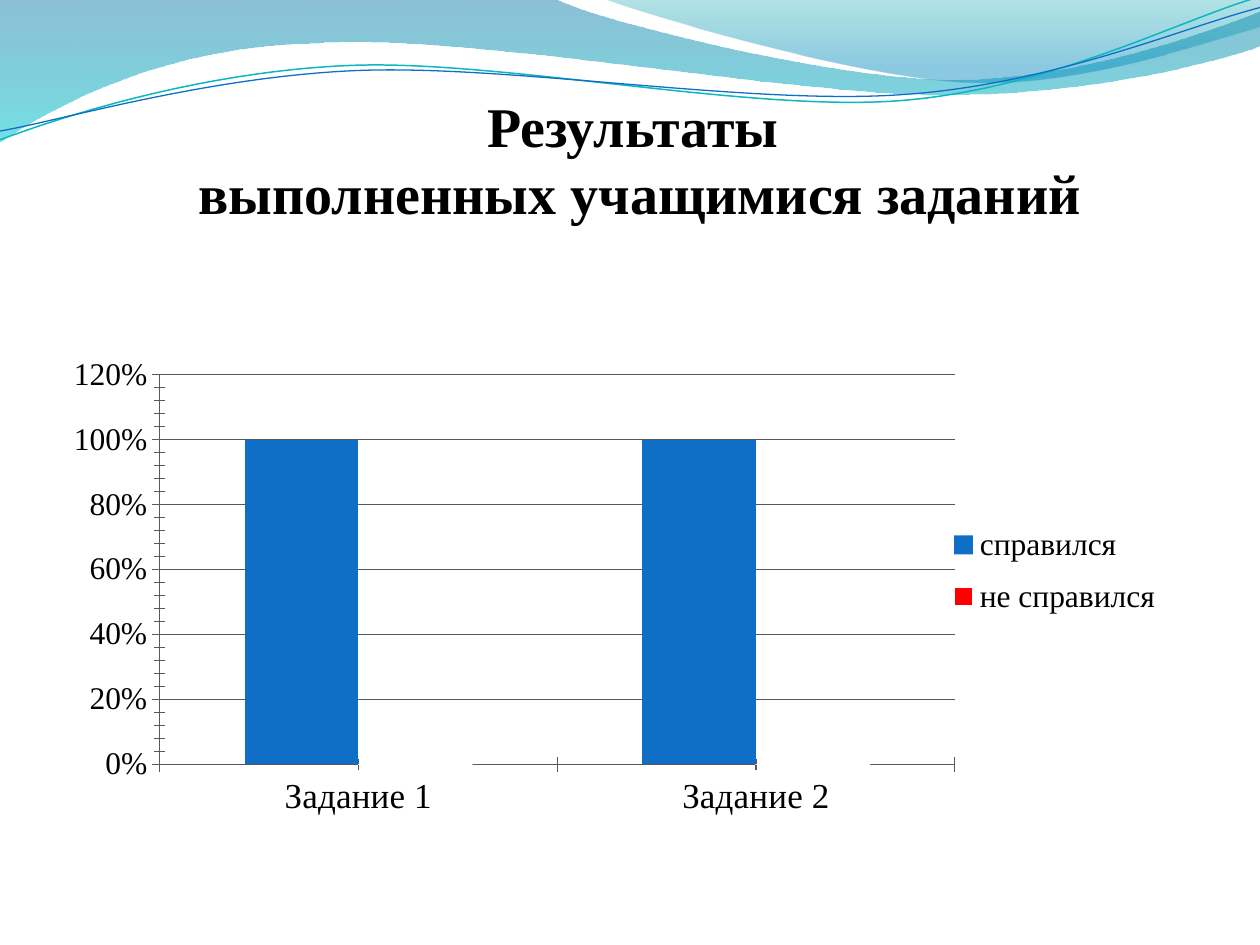
import math
from dataclasses import dataclass

from lxml import etree
from pptx import Presentation
from pptx.chart.data import CategoryChartData
from pptx.dml.color import RGBColor
from pptx.enum.chart import XL_CHART_TYPE, XL_LEGEND_POSITION, XL_TICK_MARK
from pptx.enum.text import MSO_ANCHOR, MSO_AUTO_SIZE, PP_ALIGN
from pptx.oxml.ns import qn
from pptx.util import Inches, Pt

COLUMNS = XL_CHART_TYPE.COLUMN_CLUSTERED
LEGEND_RIGHT = XL_LEGEND_POSITION.RIGHT
CROSS = XL_TICK_MARK.CROSS
CENTER = PP_ALIGN.CENTER
MIDDLE = MSO_ANCHOR.MIDDLE
GROW = MSO_AUTO_SIZE.SHAPE_TO_FIT_TEXT


@dataclass(frozen=True)
class Theme:
    font: str = "Times New Roman"
    title_size: int = 32
    category_size: int = 20
    label_size: int = 18
    text: str = "000000"
    axis: str = "595959"
    passed: str = "0F6FC6"
    failed: str = "FF0000"
    failed_outline: str = "FFFFFF"
    teal_line: str = "0AB8BF"
    blue_line: str = "0F6FC6"
    # Gradient stops: position, colour, opacity in percent
    left_wave: tuple = ((0, "0074A1", 45), (1, "00C6CF", 55))
    right_wave: tuple = ((0, "00A1A9", 30), (0.8, "008BBF", 45))


THEME = Theme()
CURVE_TILT = -2.7
CURVE_CENTER = (4.99, 0.58)

# Each path is a start point, then line ends (2 numbers) or cubic curves (6 numbers).
LEFT_WAVE = [
    (0, 0), (4.4, -0.01),
    (4.76, 0.17, 6.64, 0.63, 7.58, 0.63), (8.53, 0.63, 9.58, 0.26, 10, 0.09),
    (10.01, 0.36),
    (9.83, 0.44, 8.7, 0.76, 7.46, 0.75), (6.22, 0.75, 3.82, 0.28, 2.57, 0.34),
    (1.29, 0.36, 0.46, 0.83, -0.01, 1.13),
]
RIGHT_WAVE = [
    (4.79, -0.01),
    (5.09, 0.11, 6.82, 0.62, 7.69, 0.65), (8.56, 0.69, 9.61, 0.32, 10, 0.21),
    (10, 0),
]
TEAL_CURVE = [
    (0, 1.11),
    (0.48, 0.93, 1.58, 0.57, 2.77, 0.52), (3.95, 0.47, 5.93, 0.89, 7.13, 0.8),
    (8.33, 0.71, 9.38, 0.15, 9.98, -0.02),
]
BLUE_CURVE = [
    (0, 1.04),
    (0.47, 0.96, 1.64, 0.61, 2.83, 0.56), (4.03, 0.51, 5.97, 0.84, 7.17, 0.75),
    (8.36, 0.67, 9.41, 0.21, 10, 0.06),
]


def rgb(color):
    return RGBColor.from_string(color)


def pairs(numbers):
    return list(zip(numbers[::2], numbers[1::2]))


def untilt(segment):
    """Turn a segment back about the curve centre, so that the shape's rotation restores it."""
    angle = math.radians(-CURVE_TILT)
    cos, sin = math.cos(angle), math.sin(angle)
    center_x, center_y = CURVE_CENTER
    turned = []
    for x, y in pairs(segment):
        dx, dy = x - center_x, y - center_y
        turned += [center_x + dx * cos - dy * sin, center_y + dx * sin + dy * cos]
    return turned


def add_outline(page, segments, close):
    """Build a freeform through the segment ends, then bend its curved segments."""
    ends = [(Inches(x), Inches(y)) for x, y in (segment[-2:] for segment in segments)]
    builder = page.shapes.build_freeform(*ends[0])
    builder.add_line_segments(ends[1:], close=close)
    shape = builder.convert_to_shape()
    shape.shadow.inherit = False
    lines = list(shape.element.iter(qn("a:lnTo")))
    for line, segment in zip(lines, segments[1:]):
        if len(segment) == 6:
            curve = etree.Element(qn("a:cubicBezTo"))
            for x, y in pairs(segment):
                etree.SubElement(curve, qn("a:pt"), x=str(Inches(x) - shape.left),
                                 y=str(Inches(y) - shape.top))
            line.getparent().replace(line, curve)
    return shape


def add_wave(page, segments, stops):
    wave = add_outline(page, segments, close=True)
    wave.line.fill.background()
    wave.fill.gradient()
    wave.fill.gradient_angle = 270
    for stop, (position, color, _) in zip(wave.fill.gradient_stops, stops):
        stop.position = position
        stop.color.rgb = rgb(color)
    for element, (_, _, opacity) in zip(wave.element.iter(qn("a:srgbClr")), stops):
        etree.SubElement(element, qn("a:alpha"), val=str(opacity * 1000))


def add_curve(page, segments, color, width):
    curve = add_outline(page, [untilt(segment) for segment in segments], close=False)
    curve.rotation = CURVE_TILT
    curve.fill.background()
    curve.line.color.rgb = rgb(color)
    curve.line.width = Pt(width)


def set_font(font, size):
    font.name = THEME.font
    font.size = Pt(size)
    font.color.rgb = rgb(THEME.text)


def set_line(line, color):
    line.color.rgb = rgb(color)
    line.width = Pt(0.75)


def add_title(page, lines):
    box = page.shapes.add_textbox(Inches(0.58), Inches(0.67), Inches(9), Inches(1.18))
    frame = box.text_frame
    frame.word_wrap = True
    frame.auto_size = GROW
    frame.vertical_anchor = MIDDLE
    frame.text = "\n".join(lines)
    for para in frame.paragraphs:
        para.alignment = CENTER
        set_font(para.font, THEME.title_size)
        para.font.bold = True


def set_layout(parent, before, x, y, width, height, inner=False):
    """Place a chart part by fractions of the chart, ahead of the child named before."""
    for old in parent.findall(qn("c:layout")):
        parent.remove(old)
    layout = etree.Element(qn("c:layout"))
    manual = etree.SubElement(layout, qn("c:manualLayout"))
    settings = [("layoutTarget", "inner")] if inner else []
    settings += [("xMode", "edge"), ("yMode", "edge"),
                 ("x", x), ("y", y), ("w", width), ("h", height)]
    for name, value in settings:
        etree.SubElement(manual, qn(f"c:{name}"), val=str(value))
    parent.find(qn(before)).addprevious(layout)


def style_axis(axis, size):
    axis.major_tick_mark = axis.minor_tick_mark = CROSS
    set_line(axis.format.line, THEME.axis)
    set_font(axis.tick_labels.font, size)


def add_results_chart(page):
    data = CategoryChartData(number_format='0"%"')
    data.categories = ["Задание 1", "Задание 2"]
    data.add_series("справился", (100, 100))
    data.add_series("не справился", (0, 0))
    chart = page.shapes.add_chart(
        COLUMNS, Inches(0.25), Inches(2.75), Inches(9.42), Inches(4), data).chart
    chart.has_title = False
    set_font(chart.font, THEME.label_size)

    plot = chart.plots[0]
    plot.vary_by_categories = False
    plot.gap_width = 150
    plot.overlap = 0
    for series, color in zip(plot.series, (THEME.passed, THEME.failed)):
        series.format.fill.solid()
        series.format.fill.fore_color.rgb = rgb(color)
    set_line(plot.series[1].format.line, THEME.failed_outline)

    style_axis(chart.category_axis, THEME.category_size)
    values = chart.value_axis
    style_axis(values, THEME.label_size)
    values.minimum_scale, values.maximum_scale = 0, 120
    values.major_unit, values.minor_unit = 20, 4
    values.tick_labels.number_format = '0"%"'
    values.tick_labels.number_format_is_linked = False
    set_line(values.major_gridlines.format.line, THEME.axis)

    chart.has_legend = True
    legend = chart.legend
    legend.position = LEGEND_RIGHT
    legend.include_in_layout = True
    set_font(legend.font, THEME.label_size)
    plot_area = chart.element.find(f".//{qn('c:plotArea')}")
    set_layout(plot_area, "c:barChart", 0.108, 0.056, 0.67, 0.773, inner=True)
    set_layout(chart.element.find(f".//{qn('c:legend')}"), "c:overlay", 0.752, 0.325, 0.22, 0.24)


def main():
    deck = Presentation()
    deck.slide_width, deck.slide_height = Inches(10), Inches(7.5)
    page = deck.slides.add_slide(deck.slide_layouts[6])
    add_wave(page, LEFT_WAVE, THEME.left_wave)
    add_wave(page, RIGHT_WAVE, THEME.right_wave)
    add_curve(page, TEAL_CURVE, THEME.teal_line, 0.85)
    add_curve(page, BLUE_CURVE, THEME.blue_line, 0.75)
    add_results_chart(page)
    add_title(page, ["Результаты ", "выполненных учащимися заданий"])
    deck.save("out.pptx")


if __name__ == "__main__":
    main()
